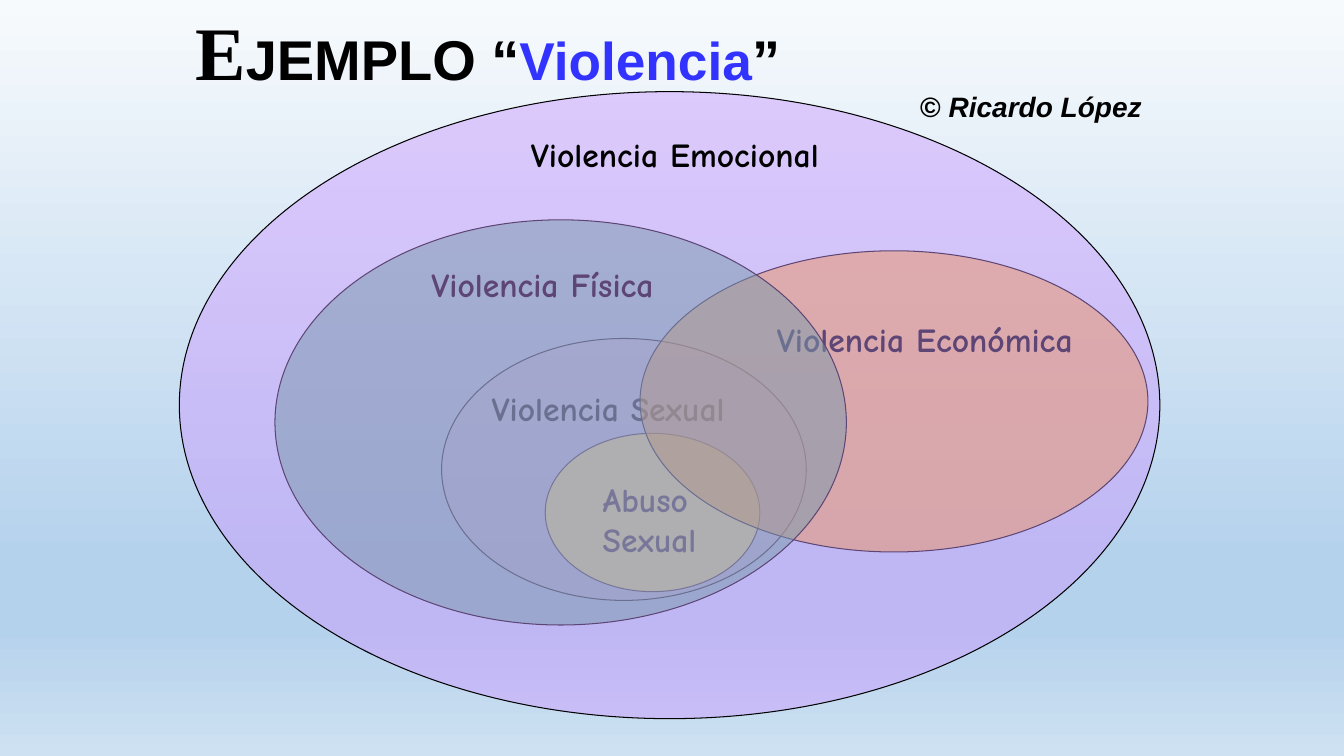
from copy import deepcopy
from dataclasses import dataclass

from lxml import etree
from pptx import Presentation
from pptx.dml.color import RGBColor
from pptx.enum.shapes import MSO_SHAPE
from pptx.enum.text import MSO_ANCHOR, MSO_AUTO_SIZE, PP_ALIGN
from pptx.oxml.ns import qn
from pptx.util import Cm, Pt

OVAL = MSO_SHAPE.OVAL
TOP = MSO_ANCHOR.TOP
LEFT = PP_ALIGN.LEFT
FIXED = MSO_AUTO_SIZE.NONE
TITLE_ONLY = 5


@dataclass(frozen=True)
class Theme:
    ink: str = "000000"
    blue: str = "3333FF"
    yellow: str = "FFFF66"
    pink: str = "FF99CC"
    orange: str = "FF9900"
    green: str = "339966"
    violet: str = "CC99FF"
    sky: tuple = ((0, "F7FAFD"), (0.74, "B5D2EC"), (0.83, "B5D2EC"), (1, "CEE1F2"))
    sans: str = "Arial"
    serif: str = "Times New Roman"
    comic: str = "Comic Neue"
    cap: int = 54
    head: int = 40
    key: int = 38
    label: int = 24
    credit: int = 20
    line: float = 0.75


THEME = Theme()

# Back to front: label, fill, opacity in percent, oval box, label box (cm)
SETS = (
    ("Abuso\nSexual", THEME.yellow, 100,
     (13.74, 10.92, 5.41, 3.99), (14.94, 11.94, 3.25, 2.31)),
    ("Violencia Sexual", THEME.pink, 19,
     (11.13, 8.53, 9.19, 6.6), (12.14, 9.65, 7.14, 1.27)),
    ("Violencia Económica", THEME.orange, 57,
     (16.13, 6.32, 12.8, 7.59), (19.33, 7.92, 8.53, 1.27)),
    ("Violencia Física", THEME.green, 51,
     (6.93, 5.54, 14.4, 10.21), (10.62, 6.53, 6.73, 1.27)),
    ("Violencia Emocional", THEME.violet, 46,
     (4.52, 2.31, 24.71, 15.8), (13.13, 3.25, 8.33, 1.27)),
)


def color(code):
    return RGBColor.from_string(code)


def cms(box):
    return [Cm(side) for side in box]


def style(run, face, size, code=THEME.ink, slant=False):
    font = run.font
    font.name, font.size = face, Pt(size)
    font.bold, font.italic = True, slant
    font.color.rgb = color(code)


def paint_sky(slide):
    fill = slide.background.fill
    fill.gradient()
    fill.gradient_angle = 270
    stops = slide.element.xpath(".//p:bg//a:gsLst")[0]
    while len(stops) < len(THEME.sky):
        stops.append(deepcopy(stops[0]))
    for stop, (place, code) in zip(fill.gradient_stops, THEME.sky):
        stop.position = place
        stop.color.rgb = color(code)


def add_title(slide):
    title = slide.shapes.title
    title.left, title.top, title.width, title.height = cms((4.67, 0, 15.27, 2.54))
    frame = title.text_frame
    frame.word_wrap, frame.auto_size = False, FIXED
    frame.vertical_anchor = TOP
    para = frame.paragraphs[0]
    para.alignment, para.line_spacing = LEFT, 1.0
    for text, face, size, code in (
        ("E", THEME.serif, THEME.cap, THEME.ink),
        ("JEMPLO “", THEME.sans, THEME.head, THEME.ink),
        ("Violencia", THEME.sans, THEME.key, THEME.blue),
        ("”", THEME.sans, THEME.head, THEME.ink),
    ):
        run = para.add_run()
        run.text = text
        style(run, face, size, code)


def add_text(shapes, text, box, face, size):
    frame = shapes.add_textbox(*cms(box)).text_frame
    frame.text = text
    frame.word_wrap = False
    for para in frame.paragraphs:
        para.alignment = LEFT
        for run in para.runs:
            style(run, face, size)
    return frame


def add_oval(shapes, box, code, alpha):
    oval = shapes.add_shape(OVAL, *cms(box))
    oval.shadow.inherit = False
    oval.fill.solid()
    oval.fill.fore_color.rgb = color(code)
    oval.line.color.rgb = color(THEME.ink)
    oval.line.width = Pt(THEME.line)
    if alpha < 100:
        tint = oval.element.spPr.find(qn("a:solidFill"))[0]
        etree.SubElement(tint, qn("a:alpha")).set("val", str(alpha * 1000))


def add_set(slide, label, code, alpha, oval_box, text_box):
    """Group one Venn oval with its label."""
    group = slide.shapes.add_group_shape()
    add_oval(group.shapes, oval_box, code, alpha)
    add_text(group.shapes, label, text_box, THEME.comic, THEME.label)


def add_credit(slide):
    frame = add_text(slide.shapes, "© ", (22.94, 2.13, 6.1, 1.09),
                     THEME.sans, THEME.credit)
    name = frame.paragraphs[0].add_run()
    name.text = "Ricardo López"
    for run in frame.paragraphs[0].runs:
        style(run, THEME.sans, THEME.credit, slant=run.text == name.text)


def main():
    deck = Presentation()
    deck.slide_width, deck.slide_height = Cm(33.87), Cm(19.05)
    slide = deck.slides.add_slide(deck.slide_layouts[TITLE_ONLY])
    paint_sky(slide)
    add_title(slide)
    for item in SETS:
        add_set(slide, *item)
    add_credit(slide)
    deck.save("out.pptx")


if __name__ == "__main__":
    main()
